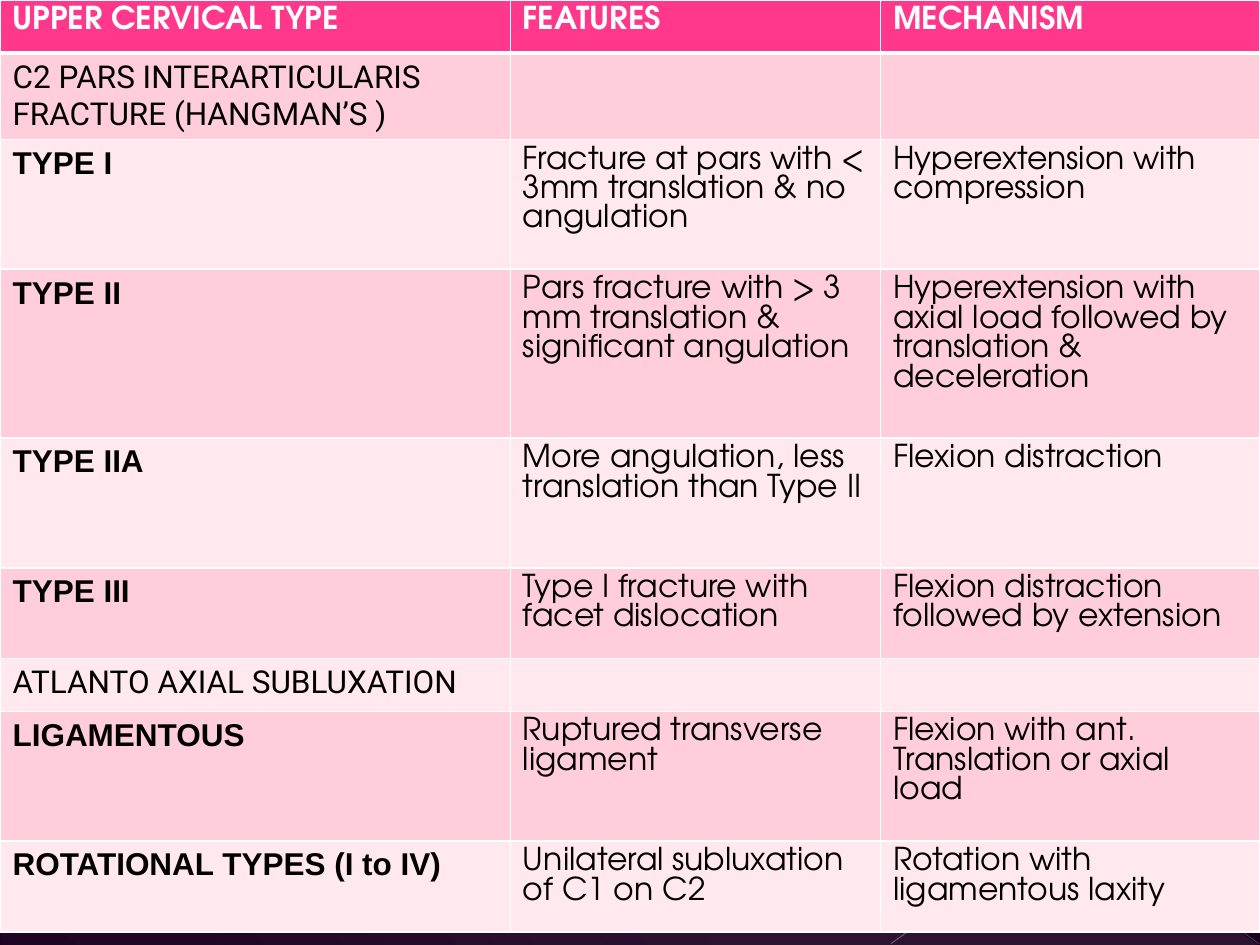
from lxml import etree
from pptx import Presentation
from pptx.dml.color import RGBColor
from pptx.enum import shapes
from pptx.oxml import parse_xml
from pptx.oxml.ns import nsdecls, qn
from pptx.util import Inches, Pt

BODY_FONT = "TeX Gyre Adventor"
HEADER_FILL, BANDS = "FF388C", ("FFCEDA", "FFE8EE")
HEADERS = ("UPPER CERVICAL TYPE", "FEATURES", "MECHANISM")
# Rows holding only a name are section headings.
ROWS = [
    ("C2 PARS INTERARTICULARIS FRACTURE (HANGMAN’S )",),
    ("TYPE I", "Fracture at pars with < 3mm translation & no angulation",
     "Hyperextension with compression"),
    ("TYPE II", "Pars fracture with > 3 mm translation & significant angulation",
     "Hyperextension with axial load followed by translation & deceleration"),
    ("TYPE IIA", "More angulation, less translation than Type II", "Flexion distraction"),
    ("TYPE III", "Type I fracture with facet dislocation",
     "Flexion distraction followed by extension"),
    ("ATLANTO AXIAL SUBLUXATION",),
    ("LIGAMENTOUS", "Ruptured transverse ligament",
     "Flexion with ant. Translation or axial load"),
    ("ROTATIONAL TYPES (I to IV)", "Unilateral subluxation of C1 on C2",
     "Rotation with ligamentous laxity"),
]
COLUMN_WIDTHS = (4.05, 2.94, 3.01)
ROW_HEIGHTS = (0.42, 0.68, 1.03, 1.34, 1.03, 0.72, 0.42, 1.03, 0.72)
# start, end, colour, width in points, opacity in percent
BACKGROUND_LINES = [
    ((0, 0.01), (9.99, 7.49), "BFBFBF", 0.39, 35),
    ((10, 5.41), (7.07, 7.49), "C6C6C6", 0.47, 45),
]
TRIANGLE_STOPS = ((0, 10), (70, 8), (100, 1))  # position, opacity in percent


def paint(fill, colour):
    fill.solid()
    fill.fore_color.rgb = RGBColor.from_string(colour)


def add_triangle(slide):
    triangle = slide.shapes.add_shape(
        shapes.MSO_SHAPE.RIGHT_TRIANGLE, Inches(0.01), Inches(0.02), Inches(9.98), Inches(7.48))
    triangle.shadow.inherit = False
    triangle.line.fill.background()
    stops = "".join(
        f'<a:gs pos="{position * 1000}"><a:srgbClr val="D2D2D2">'
        f'<a:alpha val="{opacity * 1000}"/></a:srgbClr></a:gs>'
        for position, opacity in TRIANGLE_STOPS)
    gradient = parse_xml(
        f'<a:gradFill {nsdecls("a")}><a:gsLst>{stops}</a:gsLst>'
        f'<a:lin ang="{133 * 60000}" scaled="0"/></a:gradFill>')
    triangle.element.spPr.find(qn("a:prstGeom")).addnext(gradient)


def add_line(slide, start, end, colour, width, opacity):
    line = slide.shapes.add_connector(
        shapes.MSO_CONNECTOR.STRAIGHT, *(Inches(value) for value in start + end))
    line.line.width = Pt(width)
    paint(line.line.fill, colour)
    properties = line.element.spPr
    alpha = etree.SubElement(next(properties.iter(qn("a:srgbClr"))), qn("a:alpha"))
    alpha.set("val", str(opacity * 1000))
    etree.SubElement(properties, qn("a:effectLst"))


def set_borders(cell, top, bottom):
    """Draw white borders; top and bottom are widths in points."""
    widths = {"L": 1, "R": 1, "T": top, "B": bottom}
    properties = cell._tc.get_or_add_tcPr()
    for index, (side, width) in enumerate(widths.items()):
        properties.insert(index, parse_xml(
            f'<a:ln{side} {nsdecls("a")} w="{Pt(width)}"><a:solidFill>'
            f'<a:srgbClr val="FFFFFF"/></a:solidFill></a:ln{side}>'))


def cell_style(row, column):
    """Return font, bold and text colour."""
    if row == 0:
        return BODY_FONT, True, "FFFFFF"
    if column > 0:
        return BODY_FONT, False, "000000"
    if len(ROWS[row - 1]) == 1:
        return "Roboto", False, "000000"
    return "Arial", True, "000000"


def fill_cell(cell, row, column, wording):
    paint(cell.fill, BANDS[(row - 1) % 2] if row else HEADER_FILL)
    set_borders(cell, 3 if row == 1 else 1, 3 if row == 0 else 1)
    paragraph = cell.text_frame.paragraphs[0]
    font_name, bold, colour = cell_style(row, column)
    if not wording:
        paragraph.font.size = Pt(18)
        return
    run = paragraph.add_run()
    run.text = wording
    run.font.name, run.font.size, run.font.bold = font_name, Pt(18), bold
    paint(run.font.fill, colour)


def add_fracture_table(slide):
    table = slide.shapes.add_table(
        len(ROW_HEIGHTS), len(COLUMN_WIDTHS), 0, 0,
        Inches(sum(COLUMN_WIDTHS)), Inches(sum(ROW_HEIGHTS))).table
    for column, width in zip(table.columns, COLUMN_WIDTHS):
        column.width = Inches(width)
    for row, height in zip(table.rows, ROW_HEIGHTS):
        row.height = Inches(height)
    for row, wordings in enumerate([HEADERS] + ROWS):
        for column in range(len(COLUMN_WIDTHS)):
            wording = wordings[column] if column < len(wordings) else ""
            fill_cell(table.cell(row, column), row, column, wording)


def main():
    presentation = Presentation()
    presentation.slide_width, presentation.slide_height = Inches(10), Inches(7.5)
    slide = presentation.slides.add_slide(presentation.slide_layouts[6])
    paint(slide.background.fill, "1C0022")
    add_triangle(slide)
    for line in BACKGROUND_LINES:
        add_line(slide, *line)
    add_fracture_table(slide)
    presentation.save("out.pptx")


if __name__ == "__main__":
    main()
